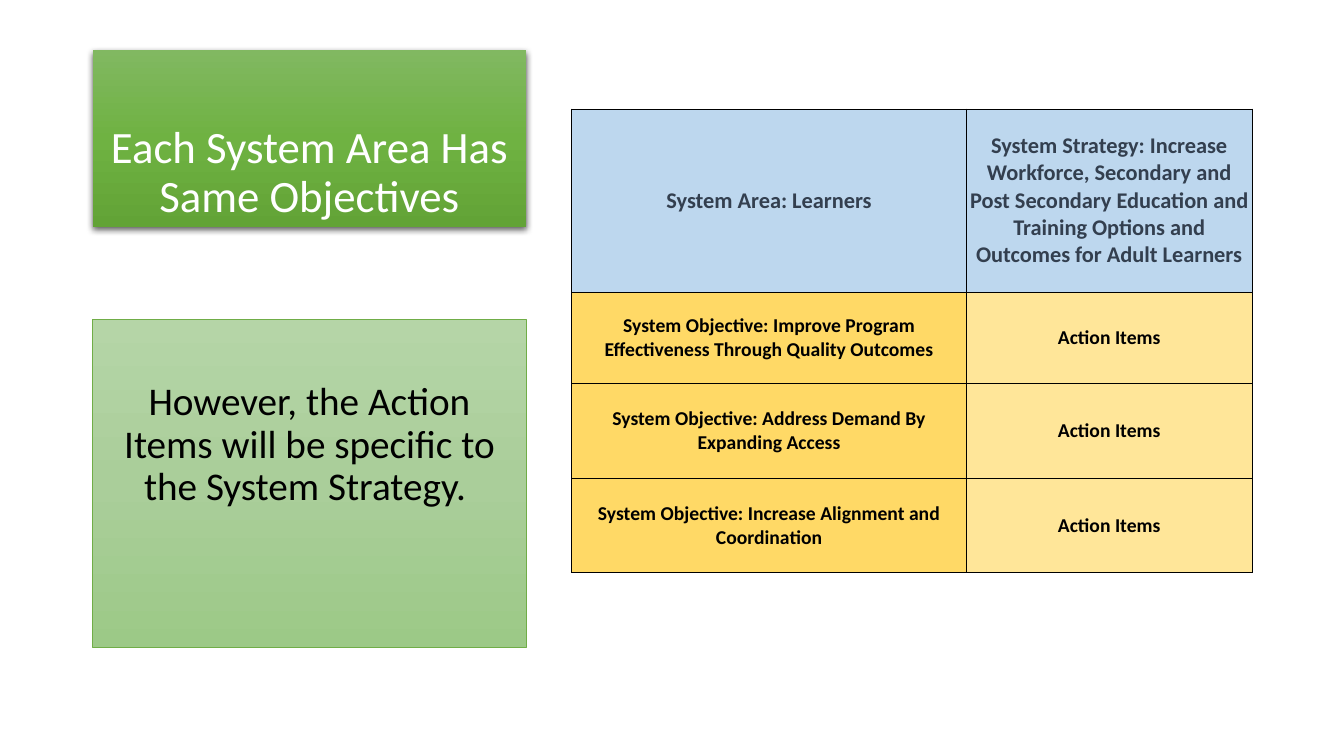
from collections import namedtuple
from dataclasses import dataclass

from lxml.etree import SubElement
from pptx import Presentation
from pptx.dml.color import RGBColor
from pptx.enum.shapes import MSO_SHAPE as Preset
from pptx.enum.text import MSO_ANCHOR as Anchor, MSO_AUTO_SIZE as AutoSize, PP_ALIGN as Align
from pptx.oxml.ns import qn
from pptx.util import Pt

Box = namedtuple("Box", "left top width height")


@dataclass(frozen=True)
class Theme:
    font: str = "Calibri"
    title_size: float = 32
    body_size: float = 28
    header_size: float = 16
    cell_size: float = 14
    white: str = "FFFFFF"
    black: str = "000000"
    header_text: str = "333F4F"
    header_fill: str = "BDD7EE"
    objective_fill: str = "FFD966"
    action_fill: str = "FFE699"
    outline: str = "70AD47"
    title_gradient: tuple = ("81B861", "6FB242", "62A336")
    body_gradient: tuple = ("B5D5A7", "AACE9A", "9CC987")


THEME = Theme()
COLUMN_SHARES = (3.92, 2.83)
ROW_SHARES = (1.82, 0.9, 0.95, 0.93)
HEADERS = (
    "System Area: Learners",
    "System Strategy: Increase Workforce, Secondary and Post Secondary Education "
    "and Training Options and Outcomes for Adult Learners",
)
OBJECTIVES = (
    "Improve Program Effectiveness Through Quality Outcomes",
    "Address Demand By Expanding Access",
    "Increase Alignment and Coordination",
)


def write_text(frame, text, size, color, bold=False, line_spacing=1.0):
    frame.word_wrap = True
    paragraph = frame.paragraphs[0]
    paragraph.alignment = Align.CENTER
    paragraph.line_spacing = line_spacing
    run = paragraph.add_run()
    run.text = text
    run.font.name = THEME.font
    run.font.size = Pt(size)
    run.font.bold = bold
    run.font.color.rgb = RGBColor.from_string(color)


def fill_gradient(shape, colors):
    shape.fill.gradient()
    shape.fill.gradient_angle = 270
    stops = shape._element.spPr.find(".//" + qn("a:gsLst"))
    for stop in list(stops):
        stops.remove(stop)
    for index, color in enumerate(colors):
        position = 100000 * index // (len(colors) - 1)
        stop = SubElement(stops, qn("a:gs"), pos=str(position))
        SubElement(stop, qn("a:srgbClr"), val=color)


def add_shadow(shape):
    shape.shadow.inherit = False
    effects = shape._element.spPr.find(qn("a:effectLst"))
    shadow = SubElement(effects, qn("a:outerShdw"), blurRad=str(Pt(4.5)), dist=str(Pt(1.5)),
                        dir="5400000", algn="ctr", rotWithShape="0")
    color = SubElement(shadow, qn("a:srgbClr"), val=THEME.black)
    SubElement(color, qn("a:alpha"), val="63000")


def build_title(slide, box):
    title = slide.shapes.title
    title.left, title.top, title.width, title.height = map(Pt, box)
    fill_gradient(title, THEME.title_gradient)
    add_shadow(title)
    frame = title.text_frame
    frame.auto_size = AutoSize.NONE
    frame.vertical_anchor = Anchor.BOTTOM
    write_text(frame, "Each System Area Has Same Objectives",
               size=THEME.title_size, color=THEME.white, line_spacing=0.9)


def build_body(slide, box):
    panel = slide.shapes.add_shape(Preset.RECTANGLE, *map(Pt, box))
    panel.shadow.inherit = False
    fill_gradient(panel, THEME.body_gradient)
    panel.line.color.rgb = RGBColor.from_string(THEME.outline)
    panel.line.width = Pt(0.5)
    frame = panel.text_frame
    frame.vertical_anchor = Anchor.TOP
    frame.margin_top = Pt(44.5)
    write_text(frame, "However, the Action Items will be specific to the System Strategy. ",
               size=THEME.body_size, color=THEME.black, line_spacing=0.9)


def format_cell(cell, text, fill, size, color):
    properties = cell._tc.get_or_add_tcPr()
    for side in ("lnL", "lnR", "lnT", "lnB"):
        line = SubElement(properties, qn(f"a:{side}"), w=str(Pt(0.5)))
        SubElement(SubElement(line, qn("a:solidFill")), qn("a:srgbClr"), val=THEME.black)
    cell.fill.solid()
    cell.fill.fore_color.rgb = RGBColor.from_string(fill)
    cell.margin_left = cell.margin_right = cell.margin_top = cell.margin_bottom = 0
    cell.vertical_anchor = Anchor.MIDDLE
    write_text(cell.text_frame, text, size=size, color=color, bold=True)


def build_table(slide, box):
    frame = slide.shapes.add_table(len(ROW_SHARES), len(COLUMN_SHARES), *map(Pt, box))
    table = frame.table
    table.first_row = table.horz_banding = False
    for column, share in zip(table.columns, COLUMN_SHARES):
        column.width = Pt(box.width * share / sum(COLUMN_SHARES))
    for row, share in zip(table.rows, ROW_SHARES):
        row.height = Pt(box.height * share / sum(ROW_SHARES))
    for index, header in enumerate(HEADERS):
        format_cell(table.cell(0, index), header, THEME.header_fill,
                    THEME.header_size, THEME.header_text)
    for index, objective in enumerate(OBJECTIVES, start=1):
        format_cell(table.cell(index, 0), f"System Objective: {objective}",
                    THEME.objective_fill, THEME.cell_size, THEME.black)
        format_cell(table.cell(index, 1), "Action Items",
                    THEME.action_fill, THEME.cell_size, THEME.black)


def main():
    presentation = Presentation()
    presentation.slide_width, presentation.slide_height = Pt(960), Pt(540)
    slide = presentation.slides.add_slide(presentation.slide_layouts.get_by_name("Title Only"))
    build_title(slide, Box(66.24, 36, 309.6, 126))
    build_body(slide, Box(66.24, 228.24, 309.6, 234))
    build_table(slide, Box(408.24, 77.76, 486, 331.2))
    presentation.save("out.pptx")


if __name__ == "__main__":
    main()
